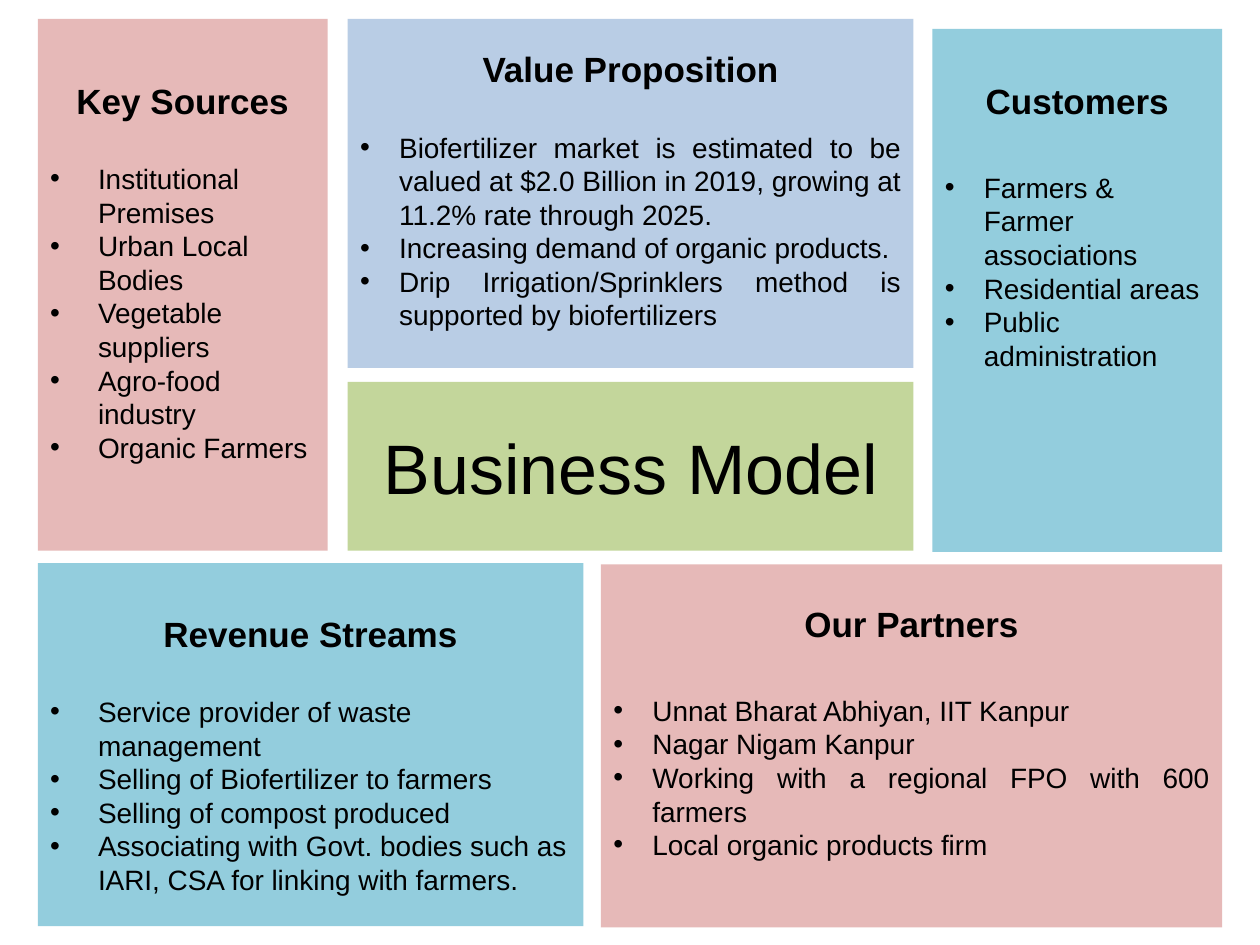
from lxml.etree import SubElement
from pptx import Presentation
from pptx.dml.color import RGBColor
from pptx.enum.shapes import MSO_SHAPE
from pptx.enum.text import MSO_ANCHOR, MSO_AUTO_SIZE, PP_ALIGN
from pptx.oxml.ns import qn
from pptx.util import Inches, Pt

PINK, BLUE, TEAL, GREEN = "E6B9B8", "B9CDE5", "93CDDD", "C3D69B"
LEFT, CENTER, JUSTIFY = PP_ALIGN.LEFT, PP_ALIGN.CENTER, PP_ALIGN.JUSTIFY


def color(value):
    """Turn a hex string into a colour."""
    return RGBColor.from_string(value)


def write(p, text, size=16, bold=False, align=LEFT, after=0, indent=None):
    """Fill a paragraph with formatted text, bulleted when an indent is given."""
    if indent:
        pPr = p._p.get_or_add_pPr()
        pPr.set("marL", str(Inches(indent)))
        pPr.set("indent", str(-Inches(indent)))
        SubElement(pPr, qn("a:buFont"), typeface="Arial")
        SubElement(pPr, qn("a:buChar"), char="•")
    p.alignment = align
    p.space_before = Pt(0)
    p.space_after = Pt(after)
    r = p.add_run()
    r.text = text
    r.font.name = "Arial"
    r.font.size = Pt(size)
    r.font.bold = bold
    r.font.color.rgb = color("000000")


class Board:
    """Hold the style and the current slide of the business model board."""

    def __init__(self, prs):
        """Start a slide with a title."""
        self.s = prs.slides.add_slide(prs.slide_layouts[5])

    def title(self, box, fill, text):
        """Place the title as a filled block."""
        sp = self.s.shapes.title
        sp.left, sp.top, sp.width, sp.height = map(Inches, box)
        sp.fill.solid()
        sp.fill.fore_color.rgb = color(fill)
        tf = sp.text_frame
        tf.auto_size = MSO_AUTO_SIZE.NONE
        tf.vertical_anchor = MSO_ANCHOR.MIDDLE
        write(tf.paragraphs[0], text, size=40, align=CENTER)

    def panel(self, box, fill, heading, items, inset, gap=23, indent=0.31, align=LEFT):
        """Add a filled block with a heading and a bulleted list."""
        sp = self.s.shapes.add_shape(MSO_SHAPE.RECTANGLE, *map(Inches, box))
        sp.shadow.inherit = False
        sp.fill.solid()
        sp.fill.fore_color.rgb = color(fill)
        sp.line.fill.background()
        tf = sp.text_frame
        tf.word_wrap = True
        tf.vertical_anchor = MSO_ANCHOR.TOP
        tf.margin_top = Inches(inset)
        write(tf.paragraphs[0], heading, size=20, bold=True, align=CENTER, after=gap)
        for item in items:
            write(tf.add_paragraph(), item, indent=indent, align=align)


def main():
    """Build and save the slide."""
    prs = Presentation()
    prs.slide_width, prs.slide_height = Inches(10), Inches(7.5)
    board = Board(prs)
    board.title((2.76, 3.03, 4.49, 1.34), GREEN, "Business Model")
    board.panel((0.3, 0.15, 2.3, 4.22), PINK, "Key Sources", [
        "Institutional Premises",
        "Urban Local Bodies",
        "Vegetable suppliers",
        "Agro-food industry",
        "Organic Farmers",
    ], inset=0.48, indent=0.38)
    board.panel((2.76, 0.15, 4.49, 2.77), BLUE, "Value Proposition", [
        "Biofertilizer market is estimated to be valued at $2.0 Billion in 2019, "
        "growing at 11.2% rate through 2025.",
        "Increasing demand of organic products.",
        "Drip Irrigation/Sprinklers method is supported by biofertilizers",
    ], inset=0.23, align=JUSTIFY)
    board.panel((7.4, 0.23, 2.3, 4.15), TEAL, "Customers", [
        "Farmers & Farmer associations",
        "Residential areas",
        "Public administration",
    ], inset=0.4, gap=28)
    board.panel((4.77, 4.48, 4.93, 2.88), PINK, "Our Partners", [
        "Unnat Bharat Abhiyan, IIT Kanpur",
        "Nagar Nigam Kanpur",
        "Working with a regional FPO with 600 farmers",
        "Local organic products firm",
    ], inset=0.3, gap=28, align=JUSTIFY)
    board.panel((0.3, 4.47, 4.33, 2.88), TEAL, "Revenue Streams", [
        "Service provider of waste management",
        "Selling of Biofertilizer to farmers",
        "Selling of compost produced",
        "Associating with Govt. bodies such as IARI, CSA for linking with farmers.",
    ], inset=0.39, indent=0.38)
    prs.save("out.pptx")


if __name__ == "__main__":
    main()
